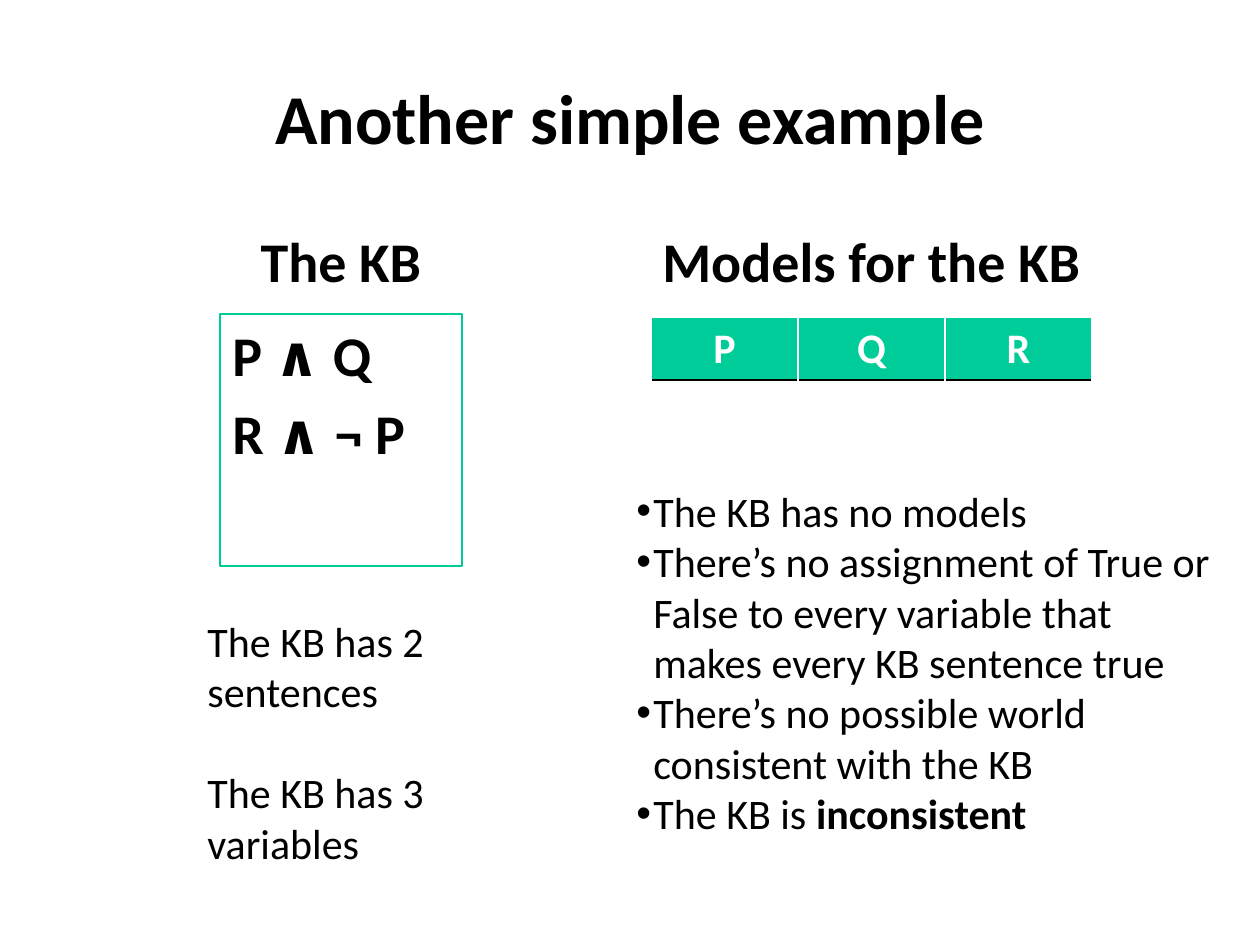
"""Build the slide about a knowledge base that has no models."""
import pptx
import pptx.chart.data
import pptx.dml.color
import pptx.enum.shapes
import pptx.enum.text
import pptx.oxml
import pptx.oxml.ns
import pptx.util
from lxml import etree

RGB = pptx.dml.color.RGBColor
BLACK = RGB(0, 0, 0)
WHITE = RGB(255, 255, 255)
GREEN = RGB(0, 204, 153)
FONT = "Calibri"
ALIGN = pptx.enum.text.PP_ALIGN
ANCHOR = pptx.enum.text.MSO_ANCHOR
FIT = pptx.enum.text.MSO_AUTO_SIZE
qn = pptx.oxml.ns.qn

HEADS = [
    ("Another simple example", (63, 38, 1134, 157), 40, ANCHOR.MIDDLE, 0),
    ("The KB", (220, 212, 242, 88), 32, ANCHOR.BOTTOM, 6.4),
    ("Models for the KB", (630, 212, 483, 88), 32, ANCHOR.BOTTOM, 6.4),
]
RULES = ["P ∧ Q", "R ∧ ¬ P"]
COUNTS = ["The KB has 2 sentences", "The KB has 3 variables"]
NOTES = [
    [("The KB has no models", False)],
    [("There’s no assignment of True or False to every variable that "
      "makes every KB sentence true", False)],
    [("There’s no possible world consistent with the KB", False)],
    [("The KB is ", False), ("inconsistent", True)],
]
VARS = ["P", "Q", "R"]
EDGES = [("L", WHITE), ("R", WHITE), ("T", WHITE), ("B", BLACK)]
COL, ROW = 147, 63


def px(n):
    return round(n * 914400 / 126)


def place(box):
    return [px(n) for n in box]


def write(para, runs, size, color=BLACK, align=ALIGN.LEFT, before=0):
    para.alignment = align
    para.space_before = pptx.util.Pt(before)
    for text, bold in runs:
        run = para.add_run()
        run.text = text
        font = run.font
        font.name, font.size, font.bold = FONT, pptx.util.Pt(size), bold
        font.color.rgb = color


def fill(frame, paras, size, **style):
    frame.word_wrap = True
    for i, runs in enumerate(paras):
        para = frame.add_paragraph() if i else frame.paragraphs[0]
        write(para, runs, size, **style)


def add_text(slide, box, anchor=ANCHOR.TOP):
    frame = slide.shapes.add_textbox(*place(box)).text_frame
    frame.vertical_anchor = anchor
    return frame


def add_bullet(para):
    props = para._p.get_or_add_pPr()
    props.set("marL", str(px(17)))
    props.set("indent", str(-px(17)))
    face = etree.SubElement(props, qn("a:buFont"))
    face.set("typeface", "Arial")
    etree.SubElement(props, qn("a:buChar")).set("char", "•")


def add_edge(cell, side, color):
    line = etree.Element(qn("a:ln" + side), w="12700")
    solid = etree.SubElement(line, qn("a:solidFill"))
    etree.SubElement(solid, qn("a:srgbClr")).set("val", str(color))
    return line


def add_vars(slide):
    shape = slide.shapes.add_table(
        1, len(VARS), *place((651, 317, COL * len(VARS), ROW)))
    table = shape.table
    table.rows[0].height = px(ROW)
    for i, name in enumerate(VARS):
        table.columns[i].width = px(COL)
        cell = table.cell(0, i)
        cell.fill.solid()
        cell.fill.fore_color.rgb = GREEN
        write(cell.text_frame.paragraphs[0], [(name, True)], 24,
              color=WHITE, align=ALIGN.CENTER)
        props = cell._tc.get_or_add_tcPr()
        for at, (side, color) in enumerate(EDGES):
            props.insert(at, add_edge(cell, side, color))


def add_rules(slide):
    box = slide.shapes.add_shape(
        pptx.enum.shapes.MSO_SHAPE.RECTANGLE, *place((220, 314, 242, 252)))
    box.shadow.inherit = False
    box.fill.background()
    box.line.color.rgb = GREEN
    box.line.width = pptx.util.Pt(0.75)
    box.text_frame.vertical_anchor = ANCHOR.TOP
    fill(box.text_frame, [[(text, True)] for text in RULES], 32, before=6.4)


def main():
    deck = pptx.Presentation()
    deck.slide_width, deck.slide_height = px(1260), px(945)
    slide = deck.slides.add_slide(deck.slide_layouts[6])
    for text, box, size, anchor, before in HEADS:
        fill(add_text(slide, box, anchor), [[(text, True)]], size,
             align=ALIGN.CENTER, before=before)
    add_rules(slide)
    add_vars(slide)

    counts = add_text(slide, (195, 609, 291, 267))
    fill(counts, [[(text, False)] for text in COUNTS], 24)
    counts.paragraphs[1].space_before = pptx.util.Pt(29)
    notes = add_text(slide, (624, 479, 605, 369))
    fill(notes, NOTES, 24)
    for para in notes.paragraphs:
        add_bullet(para)
    for frame in (counts, notes):
        frame.auto_size = FIT.SHAPE_TO_FIT_TEXT
    deck.save("out.pptx")


if __name__ == "__main__":
    main()
